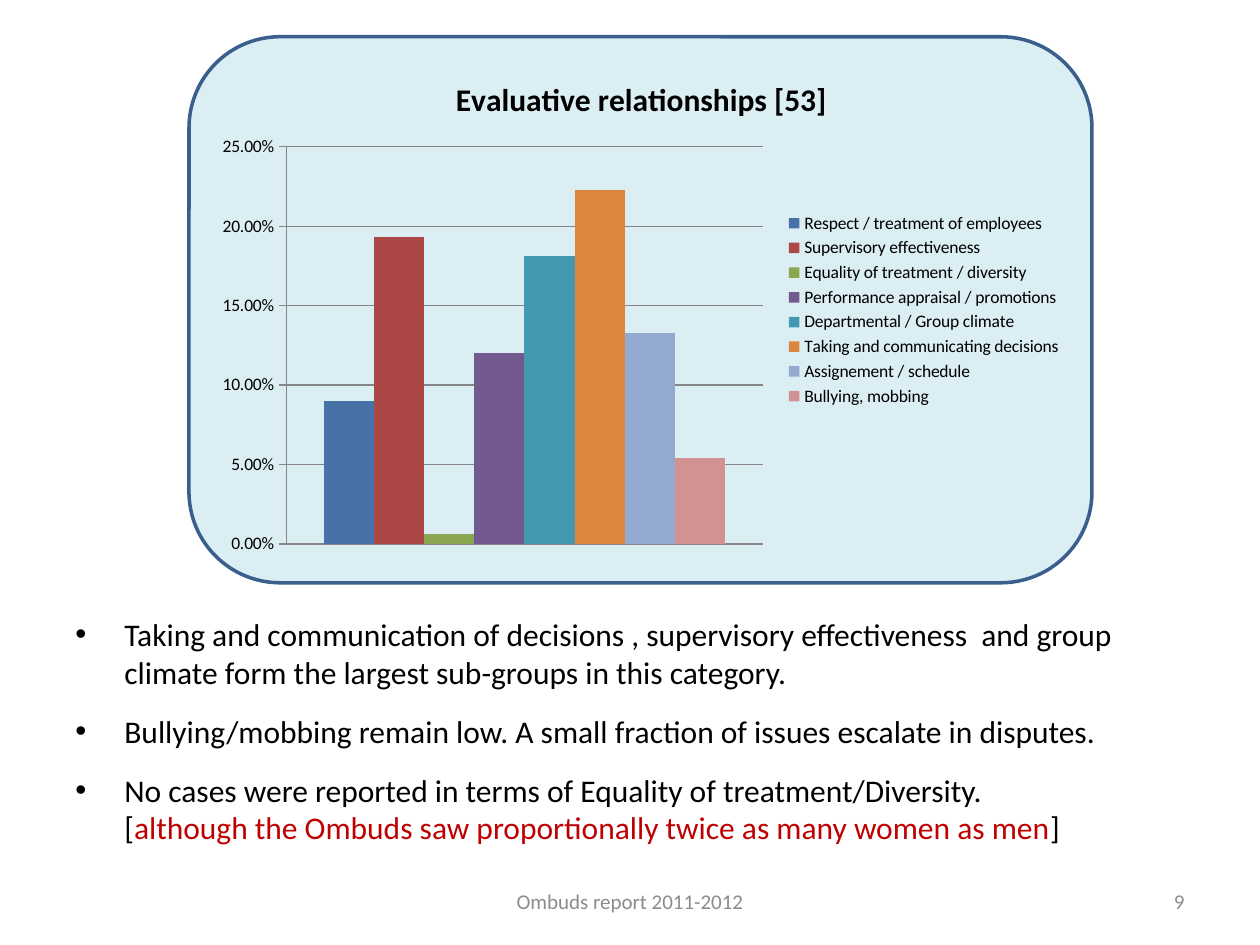
from dataclasses import dataclass

import lxml.etree
import pptx
import pptx.chart.data
import pptx.dml.color
import pptx.enum.chart
import pptx.enum.shapes
import pptx.enum.text
import pptx.oxml
import pptx.oxml.ns
import pptx.util

Pt = pptx.util.Pt
RGBColor = pptx.dml.color.RGBColor
Align = pptx.enum.text.PP_ALIGN
Anchor = pptx.enum.text.MSO_ANCHOR
qn = pptx.oxml.ns.qn

FONT = "Calibri"
BLACK = RGBColor(0x00, 0x00, 0x00)
RED = RGBColor(0xC0, 0x00, 0x00)
GREY = RGBColor(0x8C, 0x8C, 0x8C)
RULE = RGBColor(0x86, 0x86, 0x86)
PALE = RGBColor(0xDB, 0xEE, 0xF4)
EDGE = RGBColor(0x3A, 0x5F, 0x8C)
BLUE = RGBColor(0x46, 0x72, 0xA8)
BRICK = RGBColor(0xAB, 0x47, 0x44)
GREEN = RGBColor(0x8A, 0xA6, 0x4F)
PURPLE = RGBColor(0x72, 0x59, 0x90)
TEAL = RGBColor(0x42, 0x99, 0xB0)
ORANGE = RGBColor(0xDC, 0x85, 0x3E)
SKY = RGBColor(0x93, 0xA9, 0xCF)
ROSE = RGBColor(0xD0, 0x93, 0x92)


@dataclass
class Box:
    left: float
    top: float
    width: float
    height: float

    def size(self) -> tuple:
        return Pt(self.left), Pt(self.top), Pt(self.width), Pt(self.height)


@dataclass
class Bar:
    name: str
    value: float
    color: RGBColor


@dataclass
class Piece:
    text: str
    color: RGBColor = BLACK
    breaks: bool = False


@dataclass
class Footer:
    text: str
    box: Box
    align: Align


BARS = [
    Bar("Respect / treatment of employees", 0.09, BLUE),
    Bar("Supervisory effectiveness", 0.193, BRICK),
    Bar("Equality of treatment / diversity", 0.006, GREEN),
    Bar("Performance appraisal / promotions", 0.12, PURPLE),
    Bar("Departmental / Group climate", 0.181, TEAL),
    Bar("Taking and communicating decisions", 0.223, ORANGE),
    Bar("Assignement / schedule", 0.133, SKY),
    Bar("Bullying, mobbing", 0.054, ROSE),
]
POINTS = [
    [Piece("Taking and communication of decisions , supervisory effectiveness  "
           "and group climate form the largest sub-groups in this category.")],
    [Piece("Bullying/mobbing remain low. A small fraction of issues escalate in disputes.")],
    [Piece("No cases were reported in terms of Equality of treatment/Diversity.", breaks=True),
     Piece("["),
     Piece("although the Ombuds saw proportionally twice as many women as men", RED),
     Piece("]")],
]
FOOTERS = [
    Footer("Ombuds report 2011-2012", Box(246, 500.5, 228, 28.75), Align.CENTER),
    Footer("9", Box(516, 500.5, 168, 28.75), Align.RIGHT),
]


def style(font, size: float, color: RGBColor, bold: bool = False) -> None:
    font.name = FONT
    font.size = Pt(size)
    font.bold = bold
    font.color.rgb = color


def clear() -> lxml.etree._Element:
    part = pptx.oxml.parse_xml(
        f'<c:spPr {pptx.oxml.ns.nsdecls("c", "a")}><a:noFill/><a:ln><a:noFill/></a:ln></c:spPr>')
    return part


def add_panel(slide, box: Box) -> None:
    kind = pptx.enum.shapes.MSO_SHAPE.ROUNDED_RECTANGLE
    panel = slide.shapes.add_shape(kind, *box.size())
    panel.shadow.inherit = False
    panel.fill.solid()
    panel.fill.fore_color.rgb = PALE
    panel.line.color.rgb = EDGE
    panel.line.width = Pt(2)


def set_layout(plot, **parts: float) -> None:
    old = plot.find(qn("c:layout"))
    if old is not None:
        plot.remove(old)
    layout = lxml.etree.Element(qn("c:layout"))
    manual = lxml.etree.SubElement(layout, qn("c:manualLayout"))
    modes = {"layoutTarget": "inner", "xMode": "edge", "yMode": "edge"}
    for tag, value in {**modes, **parts}.items():
        lxml.etree.SubElement(manual, qn(f"c:{tag}")).set("val", str(value))
    plot.insert(0, layout)


def add_bars(slide, box: Box, title: str, bars: list[Bar]) -> None:
    enums = pptx.enum.chart
    data = pptx.chart.data.CategoryChartData(number_format="0.00%")
    data.categories = ["1"]
    for bar in bars:
        data.add_series(bar.name, [bar.value])
    kind = enums.XL_CHART_TYPE.COLUMN_CLUSTERED
    chart = slide.shapes.add_chart(kind, *box.size(), data).chart
    style(chart.font, 10, BLACK)

    chart.has_title = True
    head = chart.chart_title.text_frame.paragraphs[0].add_run()
    head.text = title
    style(head.font, 18, BLACK, True)
    chart.chart_title.include_in_layout = False

    chart.has_legend = True
    chart.legend.position = enums.XL_LEGEND_POSITION.RIGHT
    chart.legend.include_in_layout = False

    chart.category_axis.visible = False
    axis = chart.value_axis
    axis.minimum_scale = 0
    axis.maximum_scale = 0.25
    axis.major_unit = 0.05
    axis.major_tick_mark = enums.XL_TICK_MARK.OUTSIDE
    axis.tick_labels.number_format = "0.00%"
    axis.tick_labels.number_format_is_linked = False
    for line in (axis.format.line, axis.major_gridlines.format.line):
        line.color.rgb = RULE
        line.width = Pt(0.75)

    plot = chart.plots[0]
    plot.gap_width = 150
    plot.overlap = 0
    plot.vary_by_categories = False
    for series, bar in zip(plot.series, bars):
        series.format.fill.solid()
        series.format.fill.fore_color.rgb = bar.color

    root = chart.element.find(qn("c:chart"))
    area = root.find(qn("c:plotArea"))
    set_layout(area, x=0.09, y=0.18, w=0.55, h=0.78)
    area.append(clear())
    root.addnext(clear())


def add_points(slide, box: Box, points: list[list[Piece]]) -> None:
    frame = slide.shapes.add_textbox(*box.size()).text_frame
    frame.word_wrap = True
    for index, pieces in enumerate(points):
        para = frame.paragraphs[0] if index == 0 else frame.add_paragraph()
        para.space_before = Pt(12)
        props = para._p.get_or_add_pPr()
        props.set("marL", str(Pt(28)))
        props.set("indent", str(-Pt(28)))
        lxml.etree.SubElement(props, qn("a:buFont")).set("typeface", "Arial")
        lxml.etree.SubElement(props, qn("a:buChar")).set("char", "•")
        for piece in pieces:
            run = para.add_run()
            run.text = piece.text
            style(run.font, 18, piece.color)
            if piece.breaks:
                para.add_line_break()


def add_footer(slide, footer: Footer) -> None:
    frame = slide.shapes.add_textbox(*footer.box.size()).text_frame
    frame.word_wrap = True
    frame.vertical_anchor = Anchor.MIDDLE
    para = frame.paragraphs[0]
    para.alignment = footer.align
    run = para.add_run()
    run.text = footer.text
    style(run.font, 12, GREY)


def main() -> None:
    deck = pptx.Presentation()
    deck.slide_width, deck.slide_height = Pt(720), Pt(540)
    slide = deck.slides.add_slide(deck.slide_layouts[6])
    add_panel(slide, Box(108, 21, 516, 312))
    add_points(slide, Box(36, 348, 642, 163), POINTS)
    add_bars(slide, Box(119, 31.5, 495, 291), "Evaluative relationships [53]", BARS)
    for footer in FOOTERS:
        add_footer(slide, footer)
    deck.save("out.pptx")


if __name__ == "__main__":
    main()
